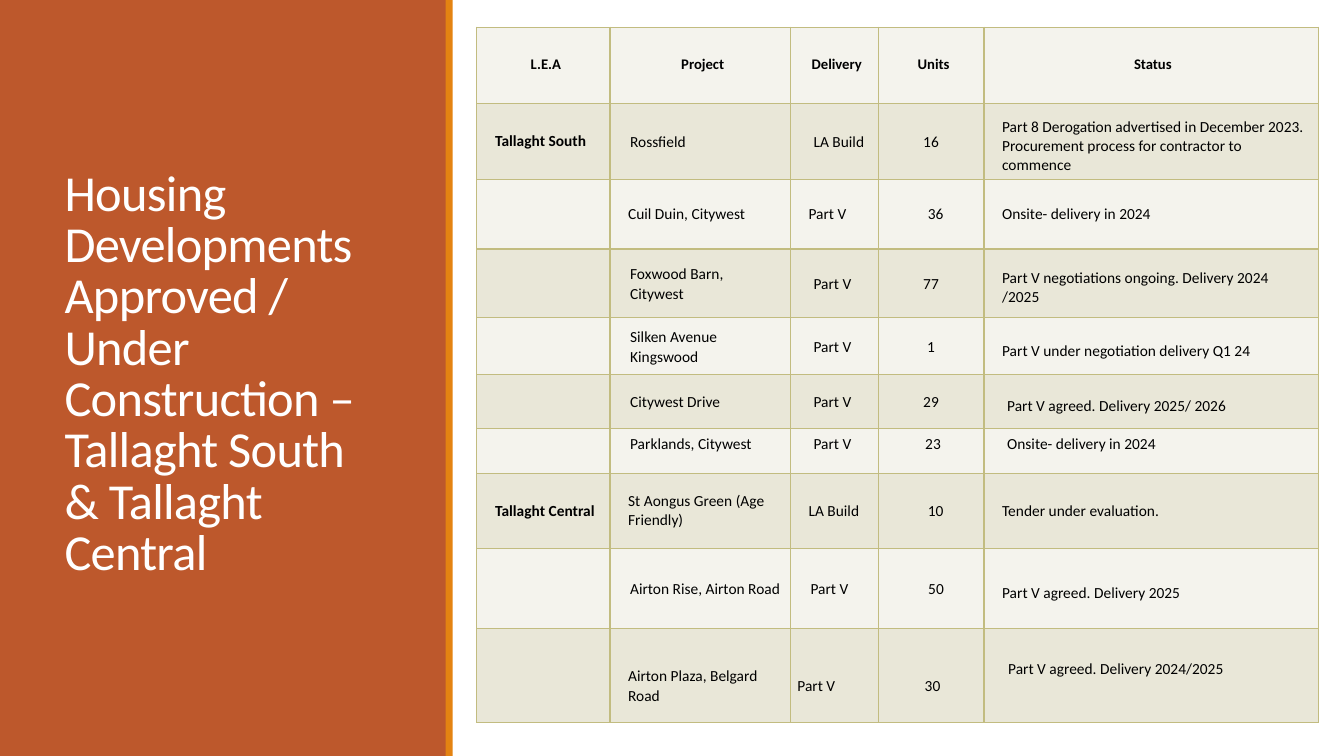
from dataclasses import dataclass

from lxml import etree
from pptx import Presentation
from pptx.dml.color import RGBColor
from pptx.enum.shapes import MSO_SHAPE
from pptx.enum.text import MSO_ANCHOR, MSO_AUTO_SIZE, PP_ALIGN
from pptx.oxml.ns import qn
from pptx.util import Inches, Pt

RECTANGLE = MSO_SHAPE.RECTANGLE
TOP, MIDDLE = MSO_ANCHOR.TOP, MSO_ANCHOR.MIDDLE
LEFT, CENTER = PP_ALIGN.LEFT, PP_ALIGN.CENTER
NO_FIT = MSO_AUTO_SIZE.NONE
TITLE_ONLY = 5
LEA, UNITS, STATUS = 0, 3, 4


@dataclass(frozen=True)
class Theme:
    """Colours, font and type sizes of the slide."""
    font: str = "Calibri"
    panel: str = "BD582C"
    accent: str = "E48312"
    white: str = "FFFFFF"
    text: str = "000000"
    border: str = "C2BC80"
    bands: tuple = ("F4F3ED", "E9E7D8")
    title_size: float = 36
    header_size: float = 10.5
    body_size: float = 11


@dataclass(frozen=True)
class RowStyle:
    """Cell padding in inches, line spacing and anchor of a table row."""
    lefts: tuple
    right: float = 0.09
    top: float = 0.09
    bottom: float = 0.09
    spacing: float = 1.0
    anchor: int = MIDDLE
    status_top: float = 0.09


THEME = Theme()
HEADER = RowStyle((0.13,) * 5, 0.08, 0.05, 0.08, status_top=0.05)
PADDED = RowStyle((0.18,) * 5)
TIGHT = RowStyle((0.18, 0.2, 0.23, 0.06, 0.18), 0.06, 0, 0, 1.07)
INDENTED = RowStyle((0.18, 0.2, 0.23, 0.06, 0.23), 0.06, 0, 0, 1.07)
SHIFTED = RowStyle((0.18, 0.2, 0.2, 0.16, 0.18), 0.06, 0, 0, 1.07)
RAISED = RowStyle((0.18, 0.2, 0.23, 0.09, 0.23), 0.05, 0.04, 0.05, 1.15,
                  TOP, 0.04)
LOWERED = RowStyle((0.18, 0.18, 0.07, 0.1, 0.24), 0.07, 0.2, 0, 1.07,
                   status_top=0.31)

COLUMN_WIDTHS = (1.32, 1.79, 0.87, 1.05, 3.32)
ROWS = (
    (0.76, HEADER, ("L.E.A", "Project", "Delivery", "Units", "Status")),
    (0.75, TIGHT, ("Tallaght South", "Rossfield", "LA Build", "16",
                   "Part 8 Derogation advertised in December 2023. "
                   "Procurement process for contractor to commence")),
    (0.69, PADDED, ("", "Cuil Duin, Citywest", "Part V", "36",
                    "Onsite- delivery in 2024")),
    (0.68, TIGHT, ("", "Foxwood Barn,\nCitywest", "Part V", "77",
                   "Part V negotiations ongoing. Delivery 2024 /2025")),
    (0.57, TIGHT, ("", "Silken Avenue\nKingswood", "Part V", "1",
                   "Part V under negotiation delivery Q1 24")),
    (0.53, INDENTED, ("", "Citywest Drive", "Part V", "29",
                      "Part V agreed. Delivery 2025/ 2026")),
    (0.45, RAISED, ("", "Parklands, Citywest", "Part V", "23",
                    "Onsite- delivery in 2024")),
    (0.74, PADDED, ("Tallaght Central", "St Aongus Green (Age Friendly)",
                    "LA Build", "10", "Tender under evaluation.")),
    (0.8, SHIFTED, ("", "Airton Rise, Airton Road", "Part V", "50",
                    "Part V agreed. Delivery 2025")),
    (0.93, LOWERED, ("", "Airton Plaza, Belgard\nRoad", "Part V", "30",
                     "Part V agreed. Delivery 2024/2025")),
)


def add_span(para, text, size, color, bold=False):
    """Add one formatted run to a paragraph."""
    span = para.add_run()
    span.text = text
    span.font.name = THEME.font
    span.font.size = Pt(size)
    span.font.bold = bold
    span.font.color.rgb = RGBColor.from_string(color)
    return span


def add_block(page, box, color):
    """Add a plain filled rectangle."""
    block = page.shapes.add_shape(RECTANGLE, *map(Inches, box))
    block.shadow.inherit = False
    block.fill.solid()
    block.fill.fore_color.rgb = RGBColor.from_string(color)
    block.line.fill.background()


def add_title_panel(page, box, text):
    """Fill the side panel, its accent stripe and the slide title."""
    left, top, width, height = box
    add_block(page, box, THEME.panel)
    add_block(page, (left + width - 0.01, top, 0.07, height), THEME.accent)
    title = page.shapes.title
    title.left, title.top = Inches(left + 0.54), Inches(top + 0.57)
    title.width, title.height = Inches(width - 1.06), Inches(height - 1.19)
    page.shapes._spTree.append(title._element)
    frame = title.text_frame
    frame.auto_size = NO_FIT
    frame.word_wrap = True
    frame.vertical_anchor = MIDDLE
    para = frame.paragraphs[0]
    para.alignment = LEFT
    para.line_spacing = 0.85
    span = add_span(para, text, THEME.title_size, THEME.white)
    span.font._element.set("spc", "-50")


def set_borders(cell):
    """Draw a thin line on all four sides of a cell."""
    properties = cell._tc.get_or_add_tcPr()
    for place, side in enumerate(("lnL", "lnR", "lnT", "lnB")):
        line = etree.Element(qn(f"a:{side}"), w=str(Pt(1)))
        fill = etree.SubElement(line, qn("a:solidFill"))
        etree.SubElement(fill, qn("a:srgbClr"), val=THEME.border)
        properties.insert(place, line)


def fill_cell(cell, text, style, column, band):
    """Format one table cell and write its paragraphs."""
    is_header = style is HEADER
    is_status = column == STATUS
    cell.fill.solid()
    cell.fill.fore_color.rgb = RGBColor.from_string(band)
    set_borders(cell)
    cell.margin_left = Inches(style.lefts[column])
    cell.margin_right = Inches(0.1 if is_status else style.right)
    cell.margin_top = Inches(style.status_top if is_status else style.top)
    cell.margin_bottom = Inches(style.bottom)
    lowered_status = is_status and style is LOWERED
    cell.vertical_anchor = TOP if lowered_status else style.anchor
    if not text:
        return
    frame = cell.text_frame
    for number, line in enumerate(text.split("\n")):
        para = frame.add_paragraph() if number else frame.paragraphs[0]
        para.alignment = CENTER if is_header or column == UNITS else LEFT
        single = is_status and style is not RAISED or column == LEA
        para.line_spacing = 1.0 if single else style.spacing
        size = THEME.header_size if is_header else THEME.body_size
        add_span(para, line, size, THEME.text, is_header or column == LEA)


def add_projects_table(page, left, top):
    """Add the table of housing projects with its corner at left, top."""
    width = sum(COLUMN_WIDTHS)
    height = sum(row[0] for row in ROWS)
    box = map(Inches, (left, top, width, height))
    table = page.shapes.add_table(len(ROWS), len(COLUMN_WIDTHS), *box).table
    table.first_row = table.horz_banding = False
    for column, column_width in zip(table.columns, COLUMN_WIDTHS):
        column.width = Inches(column_width)
    for index, (row_height, style, texts) in enumerate(ROWS):
        table.rows[index].height = Inches(row_height)
        band = THEME.bands[index % 2]
        for column, text in enumerate(texts):
            fill_cell(table.cell(index, column), text, style, column, band)


def main():
    """Build and save the housing developments slide."""
    deck = Presentation()
    deck.slide_width, deck.slide_height = Inches(13.33), Inches(7.5)
    page = deck.slides.add_slide(deck.slide_layouts[TITLE_ONLY])
    add_title_panel(page, (0, 0, 4.43, 7.5),
                    "Housing Developments Approved / Under Construction – "
                    "Tallaght South & Tallaght Central")
    add_projects_table(page, 4.73, 0.27)
    deck.save("out.pptx")


if __name__ == "__main__":
    main()
